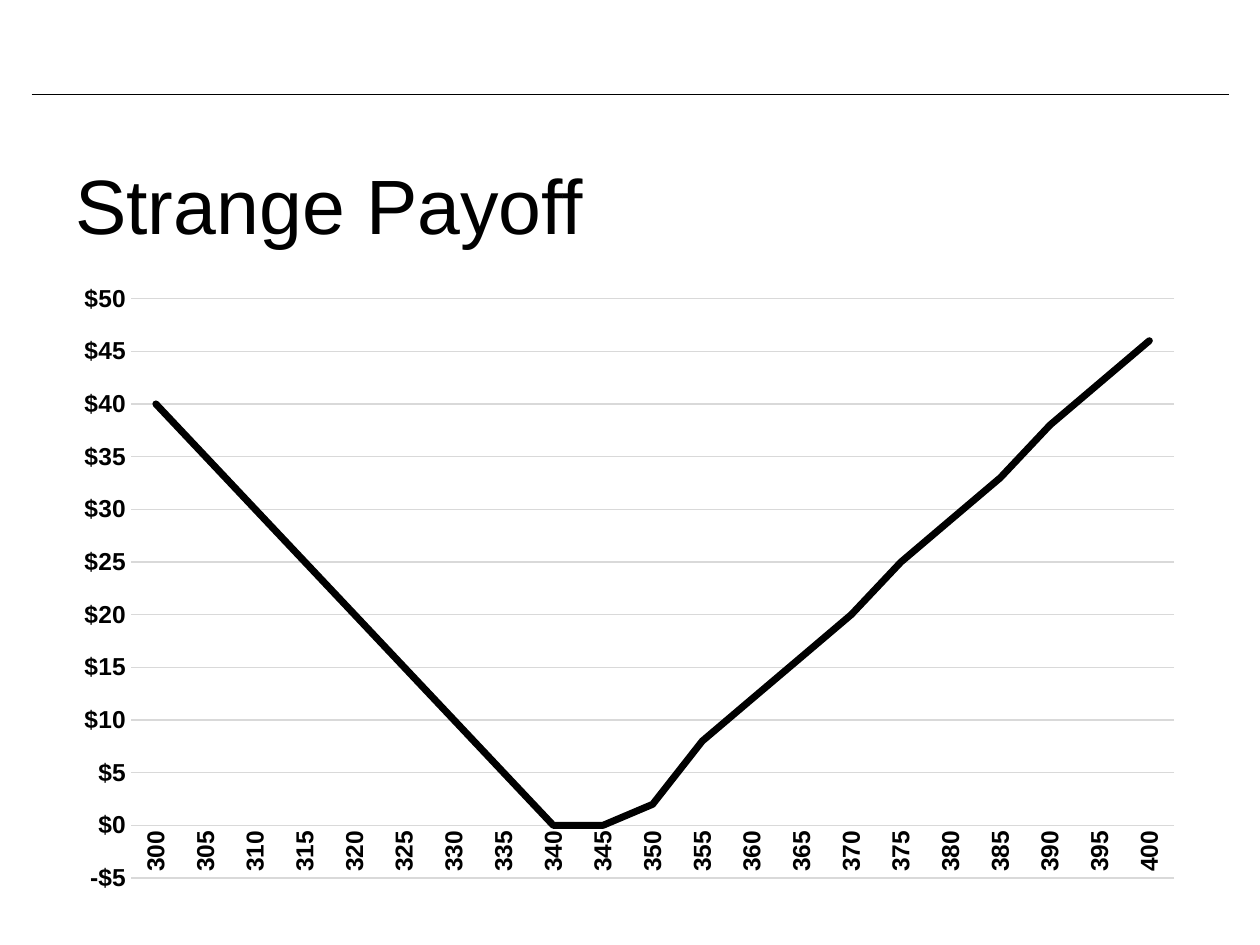
from lxml import etree
from pptx import Presentation
from pptx.chart.data import CategoryChartData
from pptx.dml.color import RGBColor
from pptx.enum import chart as ch, shapes, text
from pptx.oxml import parse_xml
from pptx.oxml.ns import nsdecls, qn
from pptx.util import Inches, Pt

BLACK = RGBColor(0x00, 0x00, 0x00)
GRID = RGBColor(0xD9, 0xD9, 0xD9)
FONT = "Arial"
DOLLARS = '"$"#,##0'

TITLE = "Strange Payoff"
PRICES = [str(price) for price in range(300, 401, 5)]
PAYOFFS = [40, 35, 30, 25, 20, 15, 10, 5, 0, 0, 2,
           8, 12, 16, 20, 25, 29, 33, 38, 42, 46]
PLOT_AREA = {"x": 0.06, "y": 0.04, "w": 0.92, "h": 0.92}


def set_font(font, size, bold=False):
    font.name = FONT
    font.size = Pt(size)
    font.bold = bold
    font.color.rgb = BLACK


def set_line(line, color, width):
    line.color.rgb = color
    line.width = Pt(width)


def add_text(s, content, left, top, width, height, size, bold=False):
    box = s.shapes.add_textbox(Inches(left), Inches(top), Inches(width), Inches(height))
    tf = box.text_frame
    tf.word_wrap = True
    tf.vertical_anchor = text.MSO_ANCHOR.MIDDLE
    r = tf.paragraphs[0].add_run()
    r.text = content
    set_font(r.font, size, bold)


def add_rule(s, x1, x2, y):
    rule = s.shapes.add_connector(shapes.MSO_CONNECTOR.STRAIGHT,
                                  Inches(x1), Inches(y), Inches(x2), Inches(y))
    set_line(rule.line, BLACK, 1)
    etree.SubElement(rule._element.spPr, qn("a:effectLst"))


def fix_plot_area(chart, area):
    """Place the inner plot area at fractions of the chart's size."""
    plot_area = chart._chartSpace.chart.plotArea
    for old in plot_area.findall(qn("c:layout")):
        plot_area.remove(old)
    sizes = "".join(f'<c:{key} val="{value}"/>' for key, value in area.items())
    plot_area.insert(0, parse_xml(
        f'<c:layout {nsdecls("c")}><c:manualLayout><c:layoutTarget val="inner"/>'
        f'<c:xMode val="edge"/><c:yMode val="edge"/>{sizes}'
        '</c:manualLayout></c:layout>'))


def add_payoff_chart(s, left, top, width, height):
    data = CategoryChartData(number_format=DOLLARS)
    data.categories = PRICES
    data.add_series("Series 1", PAYOFFS)
    chart = s.shapes.add_chart(ch.XL_CHART_TYPE.LINE, Inches(left), Inches(top),
                               Inches(width), Inches(height), data).chart
    chart.has_legend = False
    chart.has_title = False
    set_font(chart.font, 14, bold=True)
    chart.plots[0].vary_by_categories = False
    fix_plot_area(chart, PLOT_AREA)

    prices, payoffs = chart.category_axis, chart.value_axis
    for axis in (prices, payoffs):
        axis.major_tick_mark = axis.minor_tick_mark = ch.XL_TICK_MARK.NONE
        axis.tick_labels.number_format = DOLLARS
        axis.tick_labels.number_format_is_linked = False
        set_font(axis.tick_labels.font, 14, bold=True)
    prices.has_major_gridlines = False
    set_line(prices.format.line, GRID, 0.75)
    prices._element.find(qn("c:txPr")).find(qn("a:bodyPr")).set("rot", "-5400000")

    payoffs.minimum_scale, payoffs.maximum_scale, payoffs.major_unit = -5, 50, 5
    payoffs.format.line.fill.background()
    set_line(payoffs.major_gridlines.format.line, GRID, 0.75)

    series = chart.plots[0].series[0]
    series.smooth = False
    series.marker.style = ch.XL_MARKER_STYLE.NONE
    set_line(series.format.line, BLACK, 4)
    series.format.line._ln.set("cap", "rnd")
    etree.SubElement(series.format.line._ln, qn("a:round"))


prs = Presentation()
prs.slide_width, prs.slide_height = Inches(10), Inches(7.5)
s = prs.slides.add_slide(prs.slide_layouts[6])
add_rule(s, 0.25, 9.75, 0.75)
add_text(s, TITLE, 0.5, 1.08, 9, 1.08, size=44)
add_payoff_chart(s, 0.5, 2.17, 9, 5)
prs.save("out.pptx")
